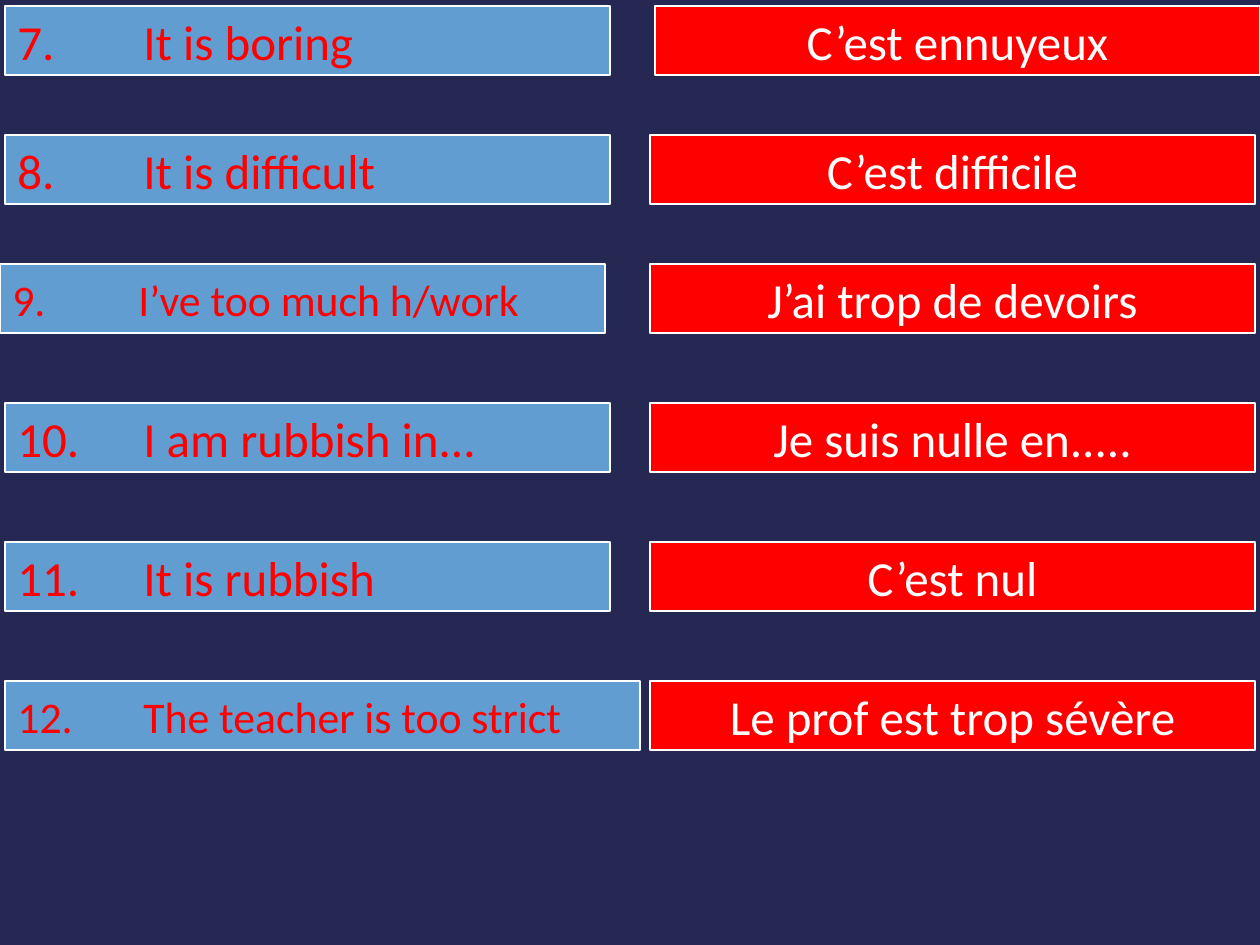
from lxml import etree
from pptx import Presentation
from pptx.dml.color import RGBColor
from pptx.enum.shapes import MSO_SHAPE as Shape
from pptx.enum.text import MSO_ANCHOR as Anchor, PP_ALIGN as Align
from pptx.oxml.ns import qn
from pptx.util import Pt

PX = 914400 // 126
COLOURS = {"navy": "242852", "blue": "629DD1", "red": "FF0000", "white": "FFFFFF"}
ROW_HEIGHT = 69
CARD_WIDTH = 605
TAB_STOP = 126


def colour(name):
    return RGBColor.from_string(COLOURS[name])


def add_card(left, top, width, text, size, fill, ink, align):
    card = slide.shapes.add_shape(
        Shape.RECTANGLE, left * PX, top * PX, width * PX, ROW_HEIGHT * PX)
    card.shadow.inherit = False
    card.fill.solid()
    card.fill.fore_color.rgb = colour(fill)
    card.line.color.rgb = colour("white")
    card.line.width = Pt(0.75)
    frame = card.text_frame
    frame.word_wrap = False
    frame.vertical_anchor = Anchor.MIDDLE
    paragraph = frame.paragraphs[0]
    paragraph.text = text
    paragraph.alignment = align
    paragraph.font.name = "Calibri"
    paragraph.font.size = Pt(size)
    paragraph.font.color.rgb = colour(ink)
    return paragraph


presentation = Presentation()
presentation.slide_width = 1260 * PX
presentation.slide_height = 945 * PX
slide = presentation.slides.add_slide(presentation.slide_layouts[6])
slide.background.fill.solid()
slide.background.fill.fore_color.rgb = colour("navy")

phrases = [
    (6, 5, CARD_WIDTH, 28, "It is boring", 655, "C’est ennuyeux"),
    (135, 5, CARD_WIDTH, 28, "It is difficult", 650, "C’est difficile"),
    (264, 0, CARD_WIDTH, 25, "I’ve too much h/work", 650, "J’ai trop de devoirs"),
    (403, 5, CARD_WIDTH, 28, "I am rubbish in...", 650, "Je suis nulle en....."),
    (542, 5, CARD_WIDTH, 28, "It is rubbish", 650, "C’est nul"),
    (681, 5, 635, 25, "The teacher is too strict", 650, "Le prof est trop sévère"),
]
for number, row in enumerate(phrases, start=7):
    top, left, width, size, english, french_left, french = row
    paragraph = add_card(
        left, top, width, f"{number}.\t{english}", size, "blue", "red", Align.LEFT)
    tabs = etree.Element(qn("a:tabLst"))
    etree.SubElement(tabs, qn("a:tab"), pos=str(TAB_STOP * PX), algn="l")
    paragraph._p.pPr.insert(0, tabs)
    add_card(french_left, top, CARD_WIDTH, french, 28, "red", "white", Align.CENTER)

presentation.save("out.pptx")
